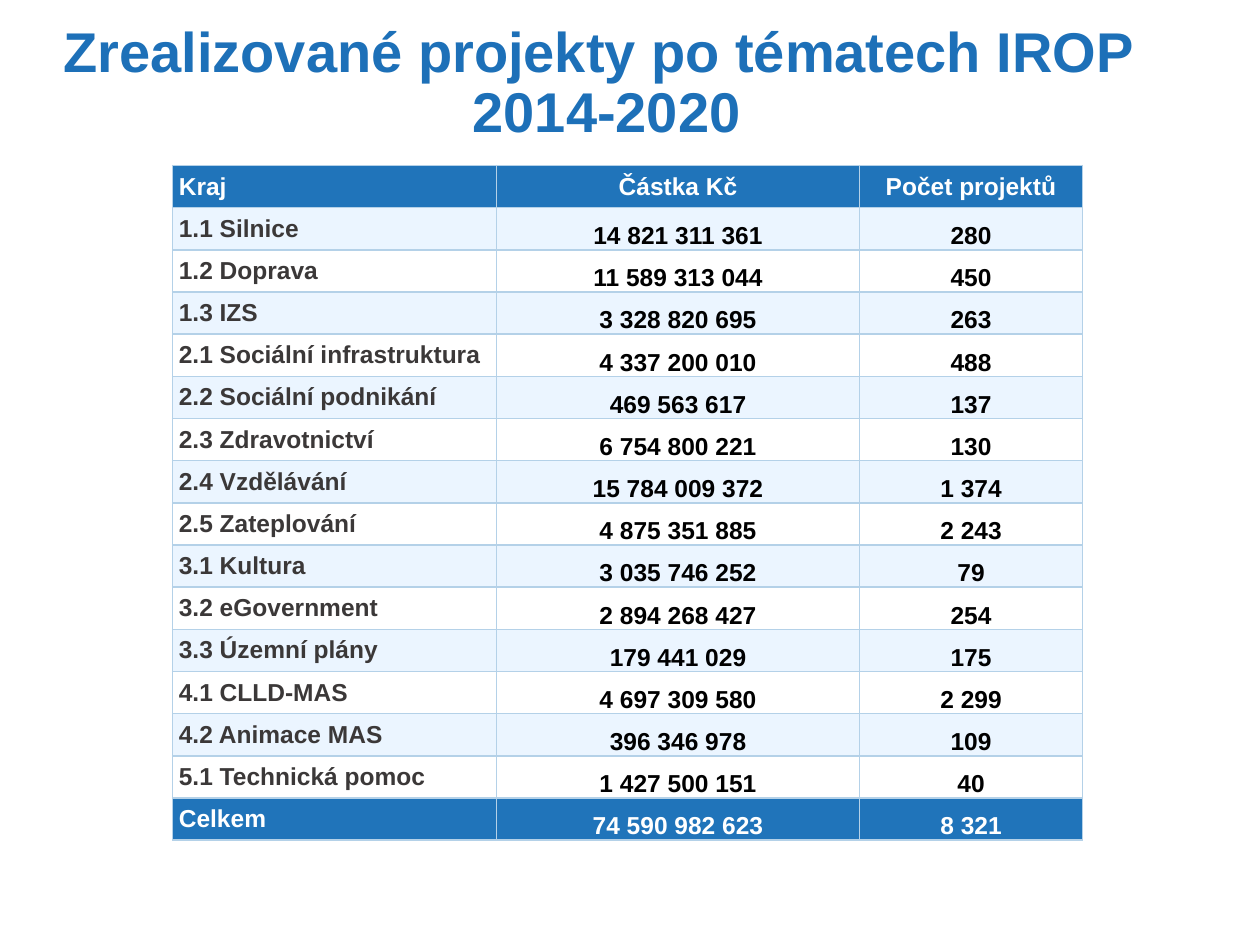
from lxml import etree
from pptx import Presentation
from pptx.dml.color import RGBColor
from pptx.enum.text import MSO_ANCHOR, PP_ALIGN
from pptx.oxml.ns import qn
from pptx.util import Pt

LEFT, CENTER = PP_ALIGN.LEFT, PP_ALIGN.CENTER
MIDDLE, BOTTOM = MSO_ANCHOR.MIDDLE, MSO_ANCHOR.BOTTOM
BLUE, PALE, WHITE = "2074BA", "EBF5FF", "FFFFFF"
GREY, BLACK, EDGE = "3B3838", "000000", "B4D1E8"

ROWS = [
    ("Kraj", "Částka Kč", "Počet projektů"),
    ("1.1 Silnice", "14 821 311 361", "280"),
    ("1.2 Doprava", "11 589 313 044", "450"),
    ("1.3 IZS", "3 328 820 695", "263"),
    ("2.1 Sociální infrastruktura", "4 337 200 010", "488"),
    ("2.2 Sociální podnikání", "469 563 617", "137"),
    ("2.3 Zdravotnictví", "6 754 800 221", "130"),
    ("2.4 Vzdělávání", "15 784 009 372", "1 374"),
    ("2.5 Zateplování", "4 875 351 885", "2 243"),
    ("3.1 Kultura", "3 035 746 252", "79"),
    ("3.2 eGovernment", "2 894 268 427", "254"),
    ("3.3 Územní plány", "179 441 029", "175"),
    ("4.1 CLLD-MAS", "4 697 309 580", "2 299"),
    ("4.2 Animace MAS", "396 346 978", "109"),
    ("5.1 Technická pomoc", "1 427 500 151", "40"),
    ("Celkem", "74 590 982 623", "8 321"),
]
WIDTHS = (185.1, 207.6, 127.3)
HIGH = 24.1


def add_run(para, text, size, color):
    run = para.add_run()
    run.text = text
    font = run.font
    font.name, font.size, font.bold = "Arial", Pt(size), True
    font.color.rgb = RGBColor.from_string(color)


def set_edges(cell):
    props = cell._tc.get_or_add_tcPr()
    for spot, tag in enumerate(("a:lnL", "a:lnR", "a:lnT", "a:lnB")):
        line = etree.Element(qn(tag), w=str(Pt(1)))
        fill = etree.SubElement(line, qn("a:solidFill"))
        etree.SubElement(fill, qn("a:srgbClr"), val=EDGE)
        props.insert(spot, line)


deck = Presentation()
deck.slide_width, deck.slide_height = Pt(720), Pt(540)
slide = deck.slides.add_slide(deck.slide_layouts[6])

# Title
title = slide.shapes.add_textbox(Pt(0), Pt(23.8), Pt(693.4), Pt(62.6))
frame = title.text_frame
frame.word_wrap = True
frame.vertical_anchor = BOTTOM
para = frame.paragraphs[0]
para.alignment, para.line_spacing = CENTER, 0.9
add_run(para, "Zrealizované projekty po tématech IROP ", 32, "1D70B8")
para.add_line_break()
add_run(para, "2014-2020", 32, "1D70B8")

# Table of topics
table = slide.shapes.add_table(
    len(ROWS), len(WIDTHS), Pt(98.6), Pt(94.6), Pt(sum(WIDTHS)), Pt(HIGH * len(ROWS))
).table
for col, width in zip(table.columns, WIDTHS):
    col.width = Pt(width)

for r, row in enumerate(ROWS):
    table.rows[r].height = Pt(HIGH)
    strong = r in (0, len(ROWS) - 1)
    back = BLUE if strong else PALE if r % 2 else WHITE
    for c, text in enumerate(row):
        cell = table.cell(r, c)
        figure = r > 0 and c > 0
        cell.fill.solid()
        cell.fill.fore_color.rgb = RGBColor.from_string(back)
        set_edges(cell)
        cell.vertical_anchor = BOTTOM if figure else MIDDLE
        cell.margin_left = cell.margin_right = Pt(0.7 if figure else 3.6)
        cell.margin_top = Pt(0.7 if figure else 0)
        cell.margin_bottom = Pt(0)
        para = cell.text_frame.paragraphs[0]
        para.alignment = CENTER if c else LEFT
        add_run(para, text, 14, WHITE if strong else BLACK if c else GREY)

deck.save("out.pptx")
